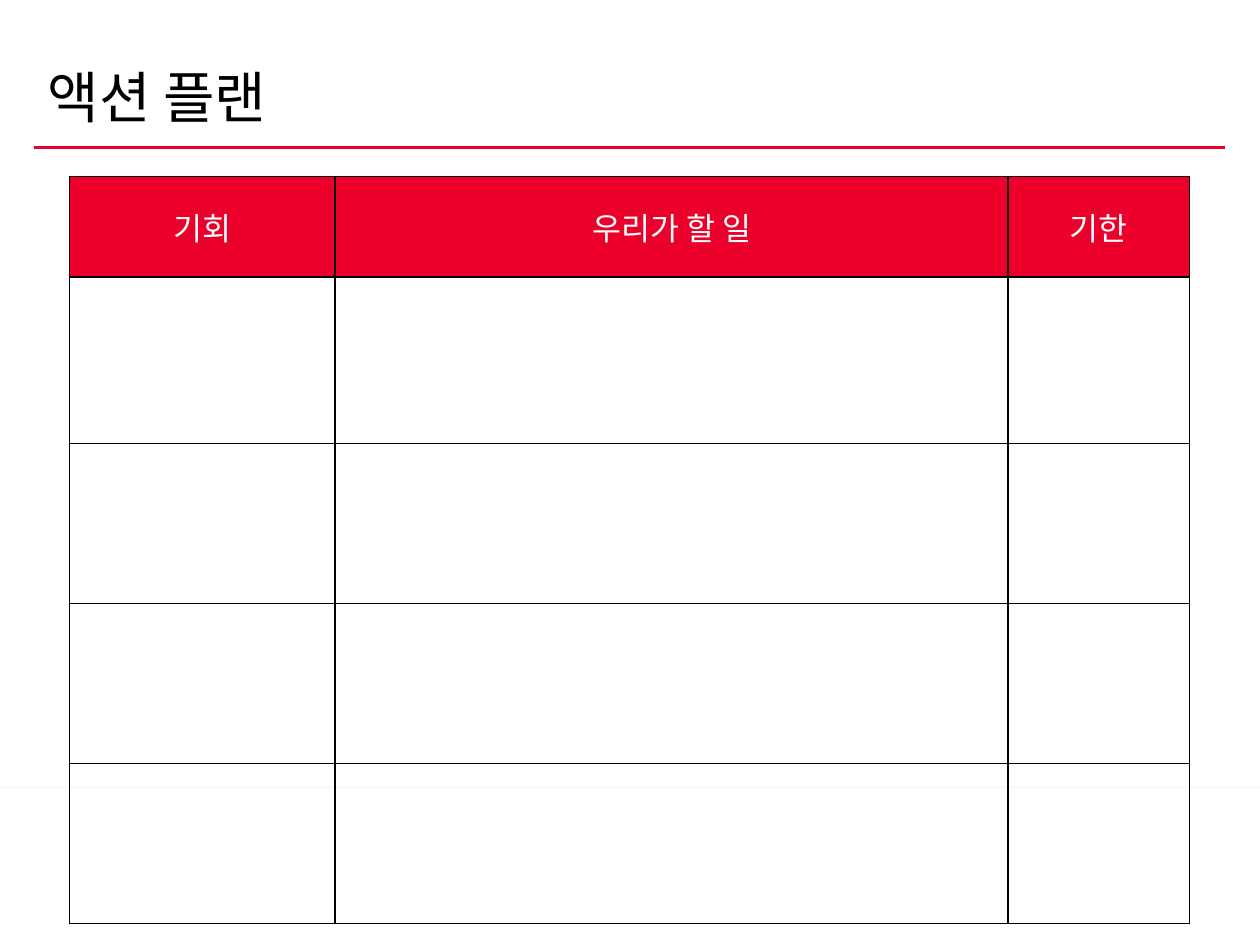
import pptx
import pptx.dml.color
import pptx.enum.shapes
import pptx.enum.text
import pptx.oxml
import pptx.oxml.ns
import pptx.util

Inches = pptx.util.Inches
Pt = pptx.util.Pt
Align = pptx.enum.text.PP_ALIGN
Anchor = pptx.enum.text.MSO_ANCHOR
NAMESPACE = pptx.oxml.ns.nsdecls("a")

HEADINGS = ["기회", "우리가 할 일", "기한"]
COLUMN_WIDTHS = [2.11, 5.34, 1.44]
ROW_HEIGHTS = [0.8, 1.32] + [1.27] * 3


def color(value):
    return pptx.dml.color.RGBColor.from_string(value)


def apply(target, values):
    for name, value in values.items():
        setattr(target, name, value)


class ActionPlanSlide:
    red, white, black = "EA002A", "FFFFFF", "000000"
    title_font = {"name": "Calibri", "size": Pt(32)}
    heading_font = {"name": "Lato", "size": Pt(18), "bold": False}

    def __init__(self, deck):
        self.page = deck.slides.add_slide(deck.slide_layouts[5])

    def add_text(self, para, text, font, ink):
        span = para.add_run()
        span.text = text
        apply(span.font, font)
        span.font.color.rgb = color(ink)

    def footer_band(self, left, top, width, height):
        band = self.page.shapes.add_shape(
            pptx.enum.shapes.MSO_SHAPE.RECTANGLE,
            Inches(left), Inches(top), Inches(width), Inches(height))
        band.fill.solid()
        band.fill.fore_color.rgb = color(self.white)
        band.line.color.rgb = color(self.white)
        band.line.width = Pt(0.75)
        band._element.spPr.append(pptx.oxml.parse_xml(
            f'<a:effectLst {NAMESPACE}>'
            f'<a:outerShdw blurRad="{Pt(3.1)}" dist="{Pt(1.8)}" dir="5400000" rotWithShape="0">'
            f'<a:srgbClr val="{self.black}"><a:alpha val="35000"/></a:srgbClr>'
            '</a:outerShdw></a:effectLst>'))

    def rule(self, left, right, top):
        line = self.page.shapes.add_connector(
            pptx.enum.shapes.MSO_CONNECTOR.STRAIGHT,
            Inches(left), Inches(top), Inches(right), Inches(top))
        line.line.color.rgb = color(self.red)
        line.line.width = Pt(2)
        line._element.spPr.append(pptx.oxml.parse_xml(f"<a:effectLst {NAMESPACE}/>"))

    def title(self, text, left, top, width, height):
        box = self.page.shapes.title
        apply(box, {"left": Inches(left), "top": Inches(top),
                    "width": Inches(width), "height": Inches(height)})
        apply(box.text_frame, {"vertical_anchor": Anchor.BOTTOM, "word_wrap": True})
        para = box.text_frame.paragraphs[0]
        apply(para, {"alignment": Align.LEFT, "line_spacing": 0.8})
        self.add_text(para, text, self.title_font, self.black)

    def borders(self, cell):
        properties = cell._tc.get_or_add_tcPr()
        for index, side in enumerate(["lnL", "lnR", "lnT", "lnB"]):
            properties.insert(index, pptx.oxml.parse_xml(
                f'<a:{side} {NAMESPACE} w="{Pt(1)}"><a:solidFill>'
                f'<a:srgbClr val="{self.black}"/></a:solidFill></a:{side}>'))

    def table(self, headings, widths, heights, left, top):
        grid = self.page.shapes.add_table(
            len(heights), len(widths), Inches(left), Inches(top),
            Inches(sum(widths)), Inches(sum(heights))).table
        apply(grid, {"first_row": False, "horz_banding": False})
        for column, width in zip(grid.columns, widths):
            column.width = Inches(width)
        for row, height in zip(grid.rows, heights):
            row.height = Inches(height)
        for cell in grid.iter_cells():
            cell.fill.background()
            self.borders(cell)
        for cell, heading in zip(grid.rows[0].cells, headings):
            cell.fill.solid()
            cell.fill.fore_color.rgb = color(self.red)
            cell.vertical_anchor = Anchor.MIDDLE
            para = cell.text_frame.paragraphs[0]
            para.alignment = Align.CENTER
            self.add_text(para, heading, self.heading_font, self.white)


def main():
    deck = pptx.Presentation()
    apply(deck, {"slide_width": Inches(10), "slide_height": Inches(7.5)})
    slide = ActionPlanSlide(deck)
    slide.footer_band(0, 6.26, 10, 1.24)
    slide.rule(0.27, 9.72, 1.17)
    slide.title("액션 플랜", 0.28, 0.05, 9, 1.03)
    slide.table(HEADINGS, COLUMN_WIDTHS, ROW_HEIGHTS, 0.55, 1.4)
    deck.save("out.pptx")


if __name__ == "__main__":
    main()
